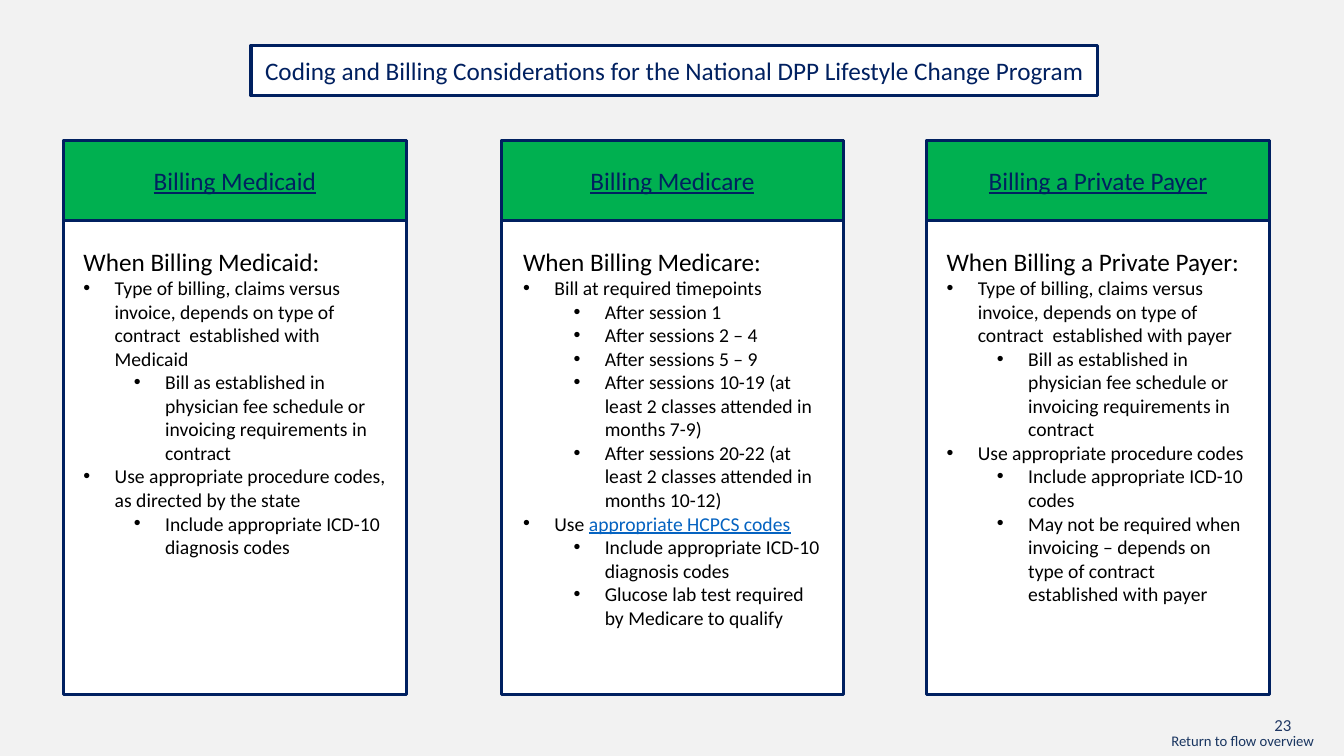
from lxml.etree import SubElement
from pptx import Presentation
from pptx.dml.color import RGBColor
from pptx.enum.shapes import MSO_SHAPE
from pptx.enum.text import MSO_ANCHOR, PP_ALIGN
from pptx.oxml.ns import qn
from pptx.util import Inches, Pt

BACKGROUND = RGBColor(0xF2, 0xF2, 0xF2)
NAVY = RGBColor(0x00, 0x20, 0x60)
GREEN = RGBColor(0x00, 0xB0, 0x50)
WHITE = RGBColor(0xFF, 0xFF, 0xFF)
BLACK = RGBColor(0x00, 0x00, 0x00)
LINK_BLUE = RGBColor(0x05, 0x63, 0xC1)
PAGE_BLUE = RGBColor(0x20, 0x38, 0x64)
RETURN_BLUE = RGBColor(0x19, 0x35, 0x60)

COLUMN_TOP, COLUMN_WIDTH, COLUMN_HEIGHT = 1.39, 3.4, 5.5
HEADER_HEIGHT = 0.8
BULLET_HANG = 0.31
LEVEL_INDENT = 0.5

FEE_SCHEDULE = ("Bill as established in physician fee schedule or "
                "invoicing requirements in contract")
BILLING_TYPE = ("Type of billing, claims versus invoice, depends on type of "
                "contract  established with ")
DIAGNOSIS_CODES = "Include appropriate ICD-10 diagnosis codes"

# Left edge, text inset, payer, then (level, text, underlined text) per bullet
COLUMNS = [
    (0.63, 0.1, "Medicaid", [
        (0, BILLING_TYPE + "Medicaid", ""),
        (1, FEE_SCHEDULE, ""),
        (0, "Use appropriate procedure codes, as directed by the state", ""),
        (1, DIAGNOSIS_CODES, ""),
    ]),
    (4.97, 0.12, "Medicare", [
        (0, "Bill at required timepoints", ""),
        (1, "After session 1", ""),
        (1, "After sessions 2 – 4", ""),
        (1, "After sessions 5 – 9", ""),
        (1, "After sessions 10-19 (at least 2 classes attended in months 7-9)", ""),
        (1, "After sessions 20-22 (at least 2 classes attended in months 10-12)", ""),
        (0, "Use ", "appropriate HCPCS codes"),
        (1, DIAGNOSIS_CODES, ""),
        (1, "Glucose lab test required by Medicare to qualify", ""),
    ]),
    (9.19, 0.1, "a Private Payer", [
        (0, BILLING_TYPE + "payer", ""),
        (1, FEE_SCHEDULE, ""),
        (0, "Use appropriate procedure codes", ""),
        (1, "Include appropriate ICD-10 codes", ""),
        (1, "May not be required when invoicing – depends on type of "
            "contract  established with payer", ""),
    ]),
]


def add_run(paragraph, text, size, color, underline=False):
    run = paragraph.add_run()
    run.text = text
    run.font.name = "Calibri"
    run.font.size = Pt(size)
    run.font.color.rgb = color
    if underline:
        run.font.underline = True


def add_panel(slide, left, top, width, height, fill, label="", underline=False):
    panel = slide.shapes.add_shape(MSO_SHAPE.RECTANGLE, Inches(left), Inches(top),
                                   Inches(width), Inches(height))
    panel.shadow.inherit = False
    panel.fill.solid()
    panel.fill.fore_color.rgb = fill
    panel.line.color.rgb = NAVY
    panel.line.width = Pt(2.25)
    if label:
        frame = panel.text_frame
        frame.vertical_anchor = MSO_ANCHOR.MIDDLE
        frame.paragraphs[0].alignment = PP_ALIGN.CENTER
        add_run(frame.paragraphs[0], label, 18, NAVY, underline)


def add_text_frame(slide, left, top, width, height, wrap=True):
    box = slide.shapes.add_textbox(Inches(left), Inches(top),
                                   Inches(width), Inches(height))
    box.text_frame.word_wrap = wrap
    return box.text_frame


def set_bullet(paragraph, level):
    paragraph.level = level
    properties = paragraph._p.get_or_add_pPr()
    properties.set("marL", str(Inches(BULLET_HANG + LEVEL_INDENT * level)))
    properties.set("indent", str(-Inches(BULLET_HANG)))
    SubElement(properties, qn("a:buFont")).set("typeface", "Arial")
    SubElement(properties, qn("a:buChar")).set("char", "•")


def add_billing_column(slide, left, top, width, height, inset, payer, bullets):
    # Body panel and green header
    add_panel(slide, left, top, width, height, WHITE)
    add_panel(slide, left, top, width, HEADER_HEIGHT, GREEN,
              f"Billing {payer}", underline=True)

    # Guidance text
    guidance = add_text_frame(slide, left + inset, top + 1, width - 0.2, height - 1.1)
    add_run(guidance.paragraphs[0], f"When Billing {payer}:", 18, BLACK)
    for level, text, link_text in bullets:
        paragraph = guidance.add_paragraph()
        set_bullet(paragraph, level)
        add_run(paragraph, text, 14, BLACK)
        if link_text:
            add_run(paragraph, link_text, 14, LINK_BLUE, underline=True)


def add_footer(slide, left, top, width):
    page_number = add_text_frame(slide, left + 1.02, top, 0.4, 0.3, wrap=False)
    add_run(page_number.paragraphs[0], "23", 12, PAGE_BLUE)
    return_note = add_text_frame(slide, left, top + 0.17, width, 0.28)
    add_run(return_note.paragraphs[0], "Return to flow overview", 10.5, RETURN_BLUE)


def main():
    presentation = Presentation()
    presentation.slide_width = Inches(13.33)
    presentation.slide_height = Inches(7.5)
    slide = presentation.slides.add_slide(presentation.slide_layouts[6])
    slide.background.fill.solid()
    slide.background.fill.fore_color.rgb = BACKGROUND

    # Title
    add_panel(slide, 2.49, 0.45, 8.4, 0.5, WHITE,
              "Coding and Billing Considerations for the National DPP "
              "Lifestyle Change Program")

    # One column per payer
    for left, inset, payer, bullets in COLUMNS:
        add_billing_column(slide, left, COLUMN_TOP, COLUMN_WIDTH, COLUMN_HEIGHT,
                           inset, payer, bullets)

    add_footer(slide, 11.52, 7.04, 1.64)
    presentation.save("out.pptx")


if __name__ == "__main__":
    main()
